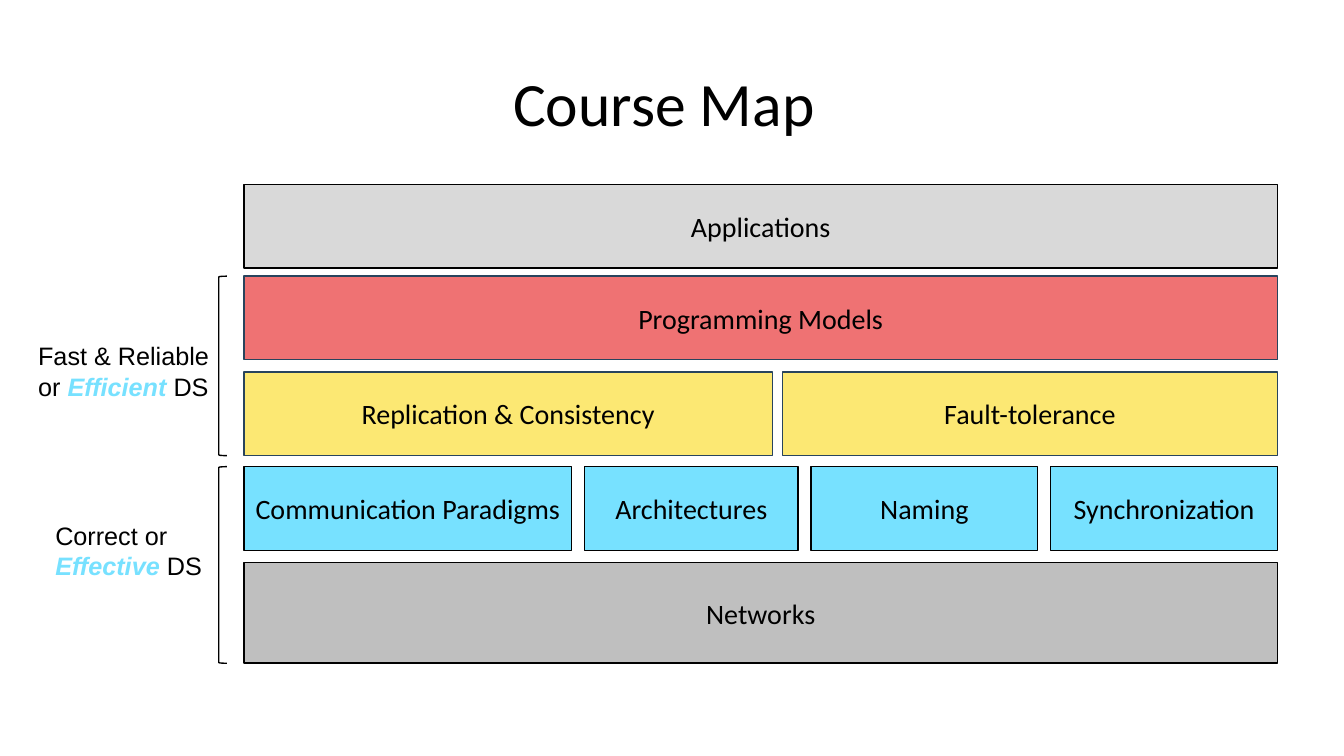
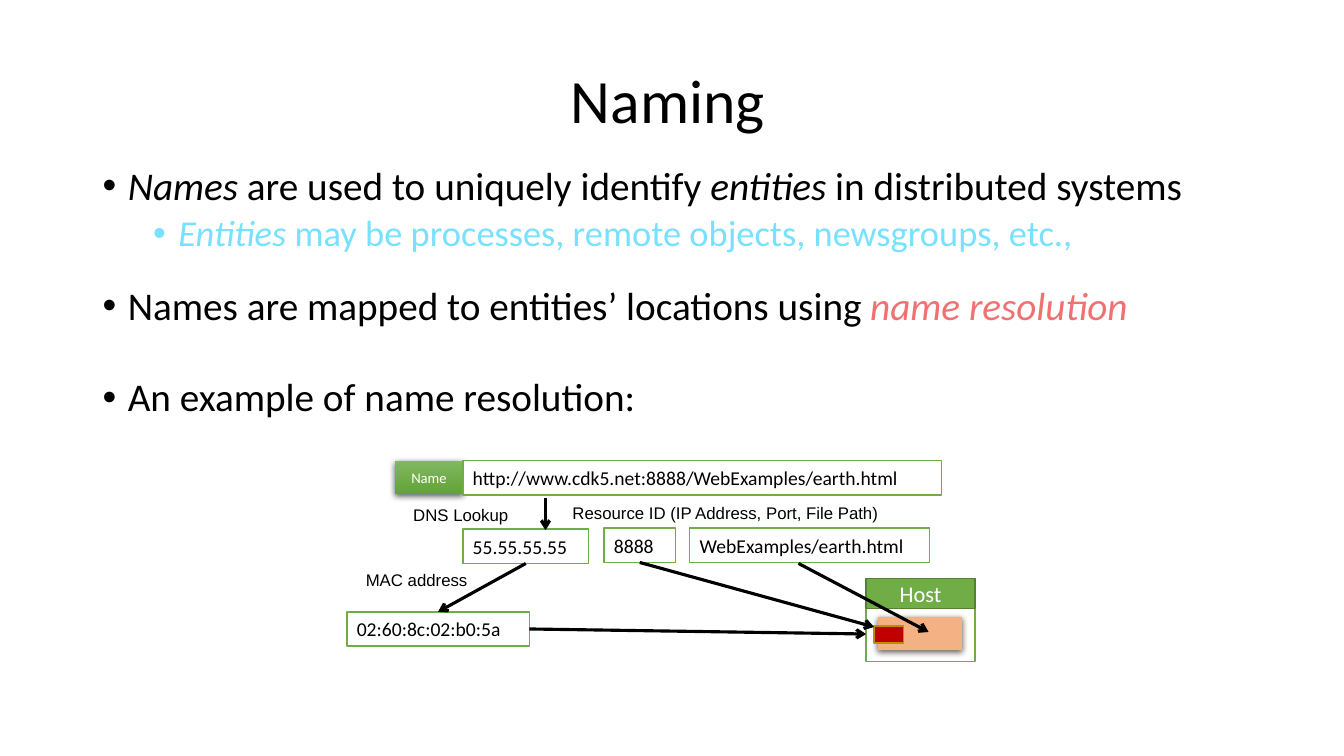
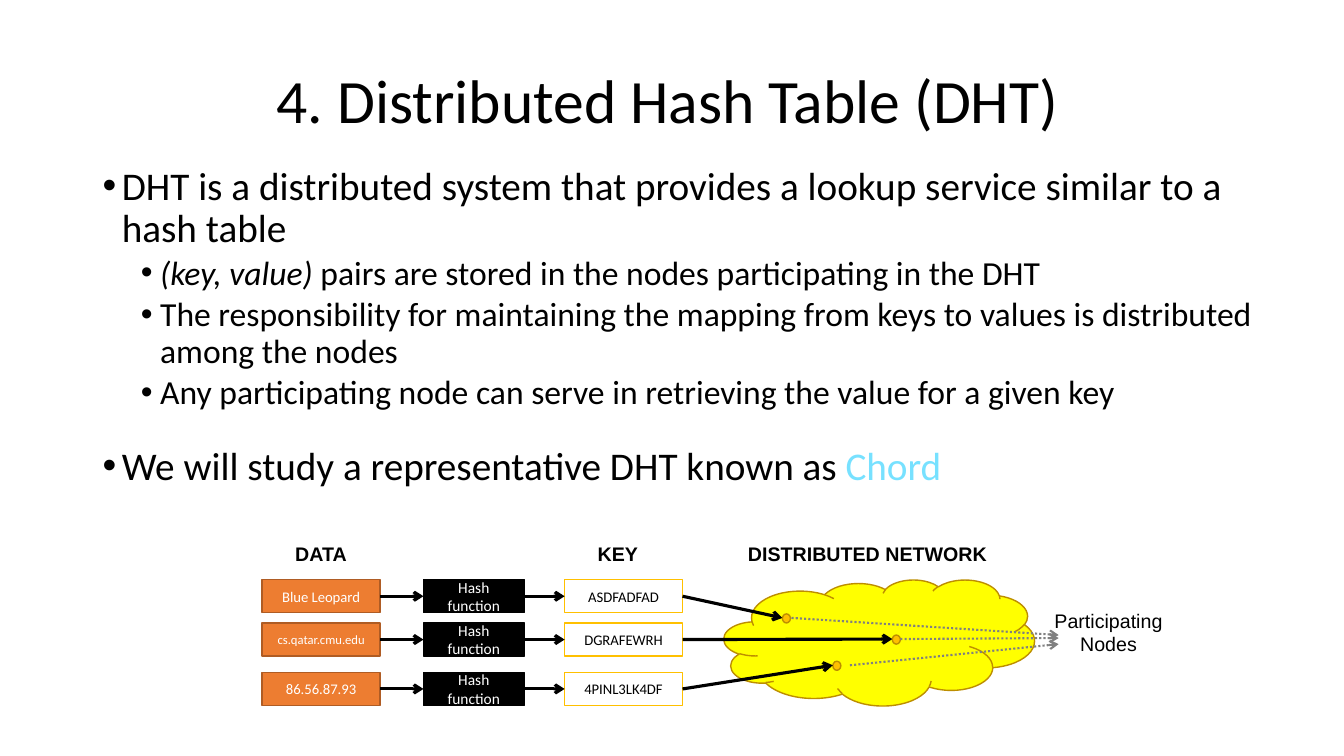
from lxml.etree import SubElement
from pptx import Presentation
from pptx.dml.color import RGBColor
from pptx.enum.dml import MSO_LINE
from pptx.enum.shapes import MSO_CONNECTOR, MSO_SHAPE
from pptx.enum.text import MSO_ANCHOR, PP_ALIGN
from pptx.oxml.ns import qn
from pptx.shapes.autoshape import Shape
from pptx.util import Inches, Pt

HUES = {
    "black": "000000", "white": "FFFFFF", "gray": "808080", "pale": "D9D9D9",
    "stone": "BFBFBF", "sky": "77E1FF", "sand": "FCE873", "rose": "EF7273",
    "navy": "28445D", "green": "70AD47", "leaf": "81B861", "grass": "62A336",
    "moss": "538035", "peach": "F4B183", "red": "C00000", "gold": "FFC000",
    "bronze": "BD8E00", "orange": "ED7D31", "rust": "AF5C24", "yellow": "FFFF00",
}
INK = {name: RGBColor.from_string(code) for name, code in HUES.items()}
RECT = MSO_SHAPE.RECTANGLE
LEFT, MID = PP_ALIGN.LEFT, PP_ALIGN.CENTER


def put(page, kind, at, rows="", size=14, ink="black", fill=None, line=None,
        face="Calibri", align=MID, wrap=True):
    place = [Inches(n) for n in at]
    if kind is None:
        shape = page.shapes.add_textbox(*place)
    else:
        shape = page.shapes.add_shape(kind, *place)
        shape.shadow.inherit = False
        if fill:
            shape.fill.solid()
            shape.fill.fore_color.rgb = INK[fill]
        else:
            shape.fill.background()
        if line:
            shape.line.color.rgb = INK[line]
            shape.line.width = Pt(1)
        else:
            shape.line.fill.background()
    frame = shape.text_frame
    frame.word_wrap = wrap
    frame.vertical_anchor = MSO_ANCHOR.MIDDLE if kind else MSO_ANCHOR.TOP
    if isinstance(rows, str):
        rows = [[(rows, "", ink)]] if rows else []
    for i, row in enumerate(rows):
        para = frame.add_paragraph() if i else frame.paragraphs[0]
        para.alignment = align
        for text, look, tint in row:
            run = para.add_run()
            run.text = text
            run.font.name = face
            run.font.size = Pt(size)
            run.font.bold = "b" in look
            run.font.italic = "i" in look
            run.font.color.rgb = INK[tint]
    return shape


def link(page, start, end, ink="black", width=2.25, dash=None):
    glue = [isinstance(tip[0], Shape) for tip in (start, end)]
    spots = [(0, 0) if stuck else tip for tip, stuck in zip((start, end), glue)]
    wire = page.shapes.add_connector(
        MSO_CONNECTOR.STRAIGHT, *[Inches(n) for spot in spots for n in spot])
    if glue[0]:
        wire.begin_connect(*start)
    if glue[1]:
        wire.end_connect(*end)
    wire.line.color.rgb = INK[ink]
    wire.line.width = Pt(width)
    if dash:
        wire.line.dash_style = dash
    SubElement(wire.line._get_or_add_ln(), qn("a:tailEnd"), type="arrow")
    SubElement(wire._element.spPr, qn("a:effectLst"))


deck = Presentation()
deck.slide_width, deck.slide_height = Inches(13.33), Inches(7.5)

pages = []
for text, at in [
    ("Course Map", (0.75, 0.33, 11.67, 1.45)),
    ("Naming", (1.92, 0.3, 9.41, 1.45)),
    ("4. Distributed Hash Table (DHT)", (1.92, 0.3, 9.41, 1.45)),
]:
    page = deck.slides.add_slide(deck.slide_layouts[5])
    title = page.shapes.title
    title.left, title.top, title.width, title.height = [Inches(n) for n in at]
    frame = title.text_frame
    frame.text = text
    frame.vertical_anchor = MSO_ANCHOR.MIDDLE
    para = frame.paragraphs[0]
    para.alignment = MID
    para.line_spacing = 0.9
    font = para.runs[0].font
    font.name, font.size = "Calibri", Pt(44)
    font.color.rgb = INK["black"]
    pages.append(page)
course, naming, table = pages

span = 10.25
for top, height, fill, line, cells in [
    (5.58, 1, "stone", "black", [("Networks", span)]),
    (4.63, 0.83, "sky", "black", [("Communication Paradigms", 3.25), ("Architectures", 2.12),
                                  ("Naming", 2.25), ("Synchronization", 2.25)]),
    (3.69, 0.83, "sand", "navy", [("Replication & Consistency", 5.24), ("Fault-tolerance", 4.91)]),
    (2.74, 0.83, "rose", "navy", [("Programming Models", span)]),
    (1.83, 0.83, "pale", "black", [("Applications", span)]),
]:
    gap = (span - sum(width for _, width in cells)) / max(len(cells) - 1, 1)
    x = 2.42
    for text, width in cells:
        put(course, RECT, (x, top, width, height), text, 20, fill=fill, line=line)
        x += width + gap

for top, height, at, rows in [
    (4.63, 1.95, (0.45, 5.11, 1.67, 0.71),
     [[("Correct or", "", "black")],
      [("Effective", "bi", "sky"), (" DS", "", "black")]]),
    (2.74, 1.78, (0.28, 3.33, 1.98, 0.71),
     [[("Fast & Reliable", "", "black")],
      [("or ", "", "black"), ("Efficient", "bi", "sky"), (" DS", "", "black")]]),
]:
    put(course, MSO_SHAPE.LEFT_BRACKET, (2.17, top, 0.08, height), line="black")
    put(course, None, at, rows, 18, face="Arial", align=LEFT, wrap=False)

for page, at, step, items in [
    (naming, (0.92, 1.6, 11.33, 4.95), 0.25, [
        (0, 28, 0, [("Names", "i", "black"), (" are used to uniquely identify ", "", "black"),
                    ("entities", "i", "black"), (" in distributed systems", "", "black")]),
        (1, 26, 5, [("Entities", "i", "sky"),
                    (" may be processes, remote objects, newsgroups, etc.,", "", "sky")]),
        (0, 28, 22.6, [("Names are mapped to entities’ locations using ", "", "black"),
                       ("name resolution", "i", "rose")]),
        (0, 28, 35, [("An example of name resolution:", "", "black")]),
    ]),
    (table, (0.92, 1.6, 11.83, 4.76), 0.19, [
        (0, 28, 0, [("DHT is a distributed system that provides a lookup service "
                     "similar to a hash table", "", "black")]),
        (1, 24, 3.8, [("(key, value)", "i", "black"),
                      (" pairs are stored in the nodes participating in the DHT", "", "black")]),
        (1, 24, 3.8, [("The responsibility for maintaining the mapping from keys to values "
                       "is distributed among the nodes", "", "black")]),
        (1, 24, 3.8, [("Any participating node can serve in retrieving the value "
                       "for a given key", "", "black")]),
        (0, 28, 24.5, [("We will study a representative DHT known as ", "", "black"),
                       ("Chord", "", "sky")]),
    ]),
]:
    body = put(page, None, at, [item[3] for item in items], align=LEFT)
    for para, (level, size, space, _) in zip(body.text_frame.paragraphs, items):
        props = para._p.get_or_add_pPr()
        props.set("marL", str(Inches(step * (1 + 2 * level))))
        props.set("indent", str(-Inches(step)))
        SubElement(props, qn("a:buFont"), typeface="Arial")
        SubElement(props, qn("a:buChar"), char="•")
        para.level = level
        para.line_spacing = 0.9
        para.space_before = Pt(space)
        for run in para.runs:
            run.font.size = Pt(size)

badge = put(naming, RECT, (3.92, 4.57, 0.67, 0.33), "Name", 10.5, "white", "green")
badge.fill.gradient()
badge.fill.gradient_angle = 270
for stop, hue in zip(badge.fill.gradient_stops, ("leaf", "grass")):
    stop.color.rgb = INK[hue]

fields = []
for text, x, y, width in [
    ("http://www.cdk5.net:8888/WebExamples/earth.html", 4.59, 4.57, 4.75),
    ("55.55.55.55", 4.59, 5.25, 1.25),
    ("WebExamples/earth.html", 6.84, 5.24, 2.38),
    ("8888", 5.99, 5.24, 0.71),
    ("02:60:8c:02:b0:5a", 3.44, 6.07, 1.81),
]:
    fields.append(put(naming, RECT, (x, y, width, 0.34), text,
                      fill="white", line="green", align=LEFT))
site, ip, file, port, mac = fields

for text, x, y, width in [
    ("DNS Lookup", 4, 4.96, 1.17),
    ("Resource ID (IP Address, Port, File Path)", 5.58, 4.94, 3.26),
    ("MAC address", 3.53, 5.6, 1.23),
]:
    put(naming, None, (x, y, width, 0.3), text, 12, face="Arial", align=LEFT)

put(naming, RECT, (8.59, 5.74, 1.08, 0.82), fill="white", line="green")
put(naming, RECT, (8.59, 5.74, 1.08, 0.3), "Host", 16, "white", "green", "moss")
disk = put(naming, RECT, (8.71, 6.12, 0.83, 0.33), fill="peach")
put(naming, RECT, (8.67, 6.21, 0.29, 0.17), fill="red", line="bronze")

for shape in (badge, disk):
    glow = SubElement(shape._element.spPr.find(qn("a:effectLst")), qn("a:outerShdw"),
                      blurRad=str(Pt(4.5)), dist=str(Pt(1.5)), dir="5400000",
                      algn="ctr", rotWithShape="0")
    shade = SubElement(glow, qn("a:srgbClr"), val=HUES["black"])
    SubElement(shade, qn("a:alpha"), val="63000")

for start, end in [
    ((5.41, 4.94), (5.41, 5.26)),
    ((ip, 2), (mac, 0)),
    ((mac, 3), (8.59, 6.29)),
    ((port, 2), (8.67, 6.22)),
    ((7.92, 5.59), (9.21, 6.27)),
]:
    link(naming, start, end)

put(table, MSO_SHAPE.CLOUD, (7.18, 5.75, 3.08, 1.25), fill="yellow", line="bronze")
for y, text, size, key, spot, start, end in [
    (5.75, "Blue Leopard", 10.5, "ASDFADFAD", (7.76, 6.13), (7.85, 6.13), (10.5, 6.3)),
    (6.18, "cs.qatar.cmu.edu", 9, "DGRAFEWRH", (8.85, 6.34), (8.93, 6.34), (10.5, 6.33)),
    (6.67, "86.56.87.93", 10.5, "4PINL3LK4DF", (8.26, 6.6), (8.43, 6.6), (10.5, 6.39)),
]:
    data = put(table, RECT, (2.6, y, 1.17, 0.33), text, size, "white", "orange", "rust")
    hasher = put(table, RECT, (4.2, y, 1, 0.33), "Hash function", 11, "white", "black", "black")
    code = put(table, RECT, (5.6, y, 1.17, 0.33), key, 10.5, "black", "white", "gold")
    put(table, MSO_SHAPE.OVAL, (spot[0], spot[1] - 0.04, 0.08, 0.09), fill="gold", line="bronze")
    link(table, (data, 3), (hasher, 1))
    link(table, (hasher, 3), (code, 1))
    link(table, (code, 3), spot)
    link(table, start, end, "gray", 1.5, MSO_LINE.ROUND_DOT)

for text, x, width in [("DATA", 2.83, 0.74), ("KEY", 5.83, 0.74),
                       ("DISTRIBUTED NETWORK", 7.32, 2.62)]:
    put(table, None, (x, 5.33, width, 0.34), [[(text, "b", "black")]], face="Arial", align=LEFT)
put(table, None, (10.33, 5.99, 1.33, 0.57), "Participating Nodes", face="Arial")

deck.save("out.pptx")
